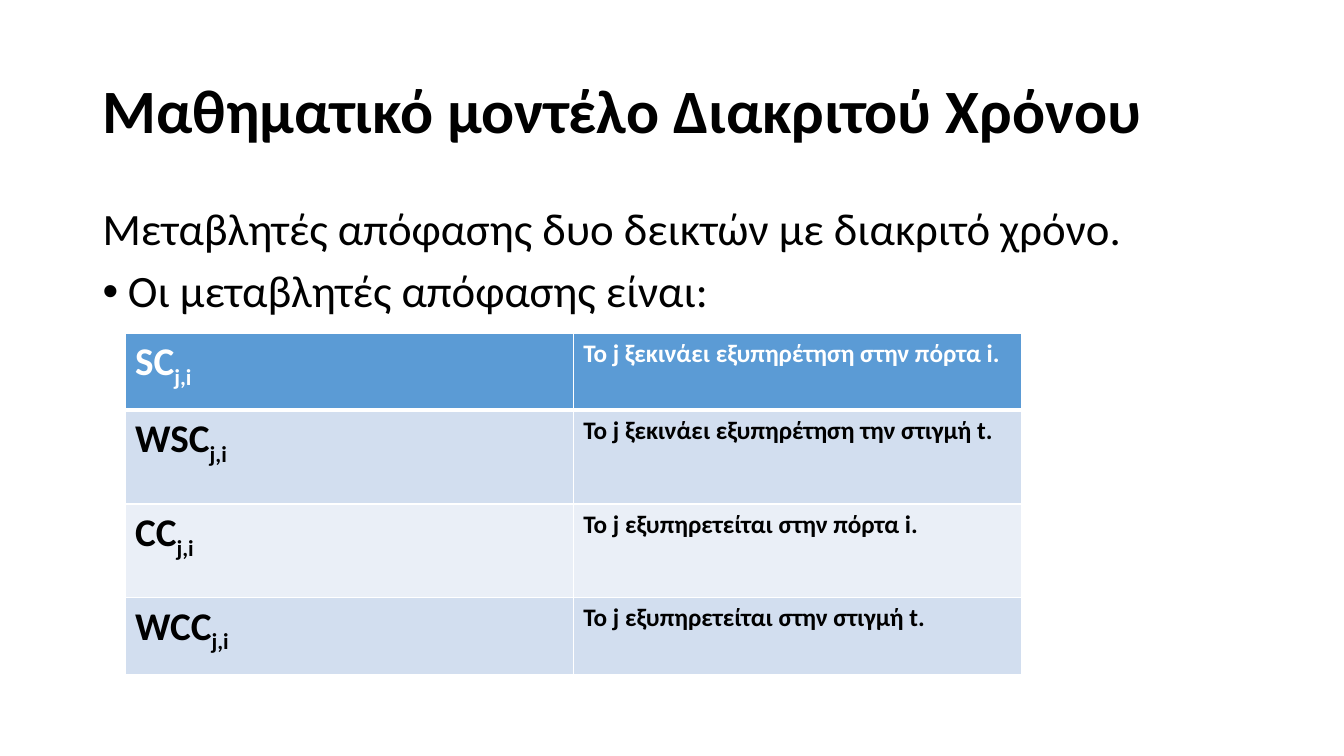
from lxml.etree import SubElement
from pptx import Presentation
from pptx.dml.color import RGBColor
from pptx.enum.text import MSO_ANCHOR as Anchor
from pptx.oxml.ns import qn
from pptx.util import Inches, Pt

FONT = "Calibri"
BLACK, WHITE = "000000", "FFFFFF"
HEADER, BAND_DARK, BAND_LIGHT = "5B9BD5", "D2DEEF", "EAEFF7"
SUBSCRIPT = "j,i"
VARIABLES = [
    ("SC", "To j ξεκινάει εξυπηρέτηση στην πόρτα i."),
    ("WSC", "Το j ξεκινάει εξυπηρέτηση την στιγμή t."),
    ("CC", "Το j εξυπηρετείται στην πόρτα i."),
    ("WCC", "Το j εξυπηρετείται στην στιγμή t."),
]
ROW_HEIGHTS = [0.76, 0.93, 0.93, 0.76]


def color(hex_code):
    return RGBColor.from_string(hex_code)


def write(paragraph, text, size, hex_code=BLACK, bold=False, baseline=0):
    run = paragraph.add_run()
    run.text = text
    run.font.name = FONT
    run.font.size = Pt(size)
    run.font.bold = bold
    run.font.color.rgb = color(hex_code)
    if baseline:
        run._r.get_or_add_rPr().set("baseline", str(baseline * 1000))


def add_frame(slide, left, top, width, height, anchor=Anchor.TOP):
    box = slide.shapes.add_textbox(
        Inches(left), Inches(top), Inches(width), Inches(height))
    frame = box.text_frame
    frame.word_wrap = True
    frame.vertical_anchor = anchor
    return frame


def add_bullet(paragraph):
    properties = paragraph._p.get_or_add_pPr()
    indent = Inches(0.25)
    properties.set("marL", str(indent))
    properties.set("indent", str(-indent))
    SubElement(properties, qn("a:buFont"), typeface="Arial")
    SubElement(properties, qn("a:buChar"), char="•")


def add_title(slide, left, top, width, height):
    title = add_frame(slide, left, top, width, height, Anchor.MIDDLE).paragraphs[0]
    title.line_spacing = 0.9
    write(title, "Μαθηματικό μοντέλο Διακριτού Χρόνου", 44, bold=True)


def add_introduction(slide, left, top, width, height):
    frame = add_frame(slide, left, top, width, height)
    summary = frame.paragraphs[0]
    summary.line_spacing = 0.9
    write(summary, "Μεταβλητές απόφασης δυο δεικτών με διακριτό χρόνο.", 32)
    lead_in = frame.add_paragraph()
    lead_in.line_spacing = 0.9
    lead_in.space_before = Pt(10)
    add_bullet(lead_in)
    write(lead_in, "Οι μεταβλητές απόφασης είναι:", 32)


def set_borders(cell, **widths):
    properties = cell._tc.get_or_add_tcPr()
    for side in ("L", "R", "T", "B"):
        line = SubElement(properties, qn(f"a:ln{side}"), w=str(Pt(widths.get(side, 1))))
        fill = SubElement(line, qn("a:solidFill"))
        SubElement(fill, qn("a:srgbClr"), val=WHITE)


def add_variables(slide, left, top, width, height):
    table = slide.shapes.add_table(
        len(VARIABLES), 2, Inches(left), Inches(top), Inches(width), Inches(height)).table
    for row, row_height in zip(table.rows, ROW_HEIGHTS):
        row.height = Inches(row_height)
    for index, (symbol, meaning) in enumerate(VARIABLES):
        if index == 0:
            fill, ink, edges = HEADER, WHITE, {"B": 3}
        else:
            fill = BAND_DARK if index % 2 else BAND_LIGHT
            ink, edges = BLACK, {"T": 3} if index == 1 else {}
        symbol_cell, meaning_cell = table.rows[index].cells
        for cell in (symbol_cell, meaning_cell):
            set_borders(cell, **edges)
            cell.fill.solid()
            cell.fill.fore_color.rgb = color(fill)
        symbol_line = symbol_cell.text_frame.paragraphs[0]
        write(symbol_line, symbol, 28, ink, bold=True)
        write(symbol_line, SUBSCRIPT, 28, ink, bold=True, baseline=-25)
        write(meaning_cell.text_frame.paragraphs[0], meaning, 18, ink, bold=True)


def main():
    deck = Presentation()
    deck.slide_width = Inches(13.33)
    deck.slide_height = Inches(7.5)
    slide = deck.slides.add_slide(deck.slide_layouts[6])
    add_title(slide, 0.92, 0.4, 11.5, 1.45)
    add_introduction(slide, 0.92, 2, 11.5, 4.76)
    add_variables(slide, 1.24, 3.31, 8.89, sum(ROW_HEIGHTS))
    deck.save("out.pptx")


if __name__ == "__main__":
    main()
